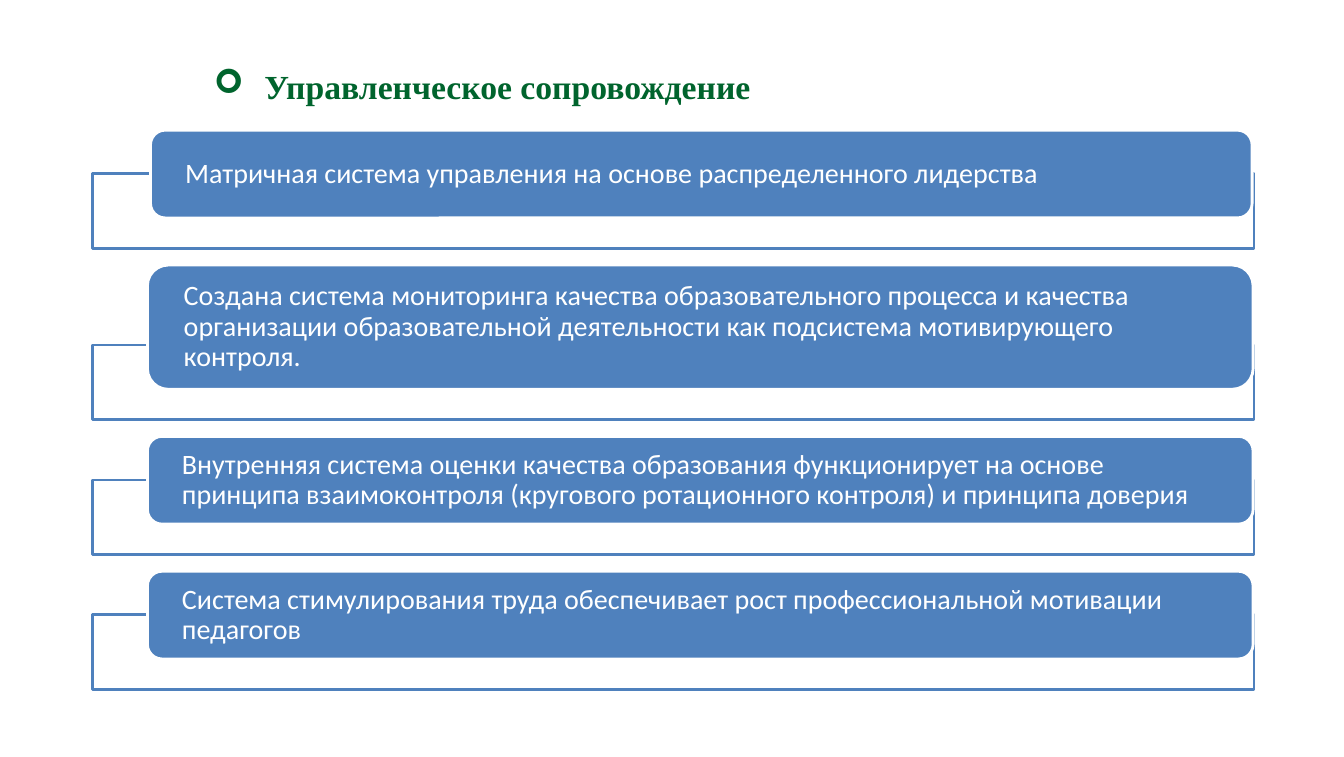
"""Build the slide on management support with four outlined statements."""
from dataclasses import dataclass

from lxml.etree import SubElement
from pptx import Presentation
from pptx.dml.color import RGBColor
from pptx.enum.shapes import MSO_SHAPE
from pptx.enum.text import MSO_ANCHOR, PP_ALIGN
from pptx.oxml.ns import qn
from pptx.shapes.autoshape import Shape
from pptx.slide import Slide
from pptx.text.text import TextFrame
from pptx.util import Pt

WHITE = RGBColor(0xFF, 0xFF, 0xFF)
BLUE = RGBColor(0x4F, 0x81, 0xBD)
GREEN = RGBColor(0x00, 0x64, 0x2D)

TITLE = "Управленческое сопровождение"
TITLE_FORMAT = {"name": "Times New Roman", "size": Pt(24), "bold": True}
STATEMENT_FORMAT = {"name": "Calibri", "size": Pt(20), "bold": False}
PANEL_FRAME_FORMAT = {
    "word_wrap": True,
    "vertical_anchor": MSO_ANCHOR.MIDDLE,
    "margin_left": Pt(21.6),
    "margin_right": Pt(21.6),
    "margin_top": Pt(0),
    "margin_bottom": Pt(0),
}

FIRST_TOP = 92.9
PANEL_GAP = 33.6
FRAME_LEFT, FRAME_WIDTH, FRAME_HEIGHT = 66.24, 828, 53.3
FRAME_OVERLAP = 31.5
TITLE_INDENT = 36


@dataclass
class Statement:
    """A rounded panel with its wording."""

    text: str
    left: float = 105.1
    width: float = 788.4
    height: float = 62.6


STATEMENTS = [
    Statement(
        "Матричная система управления на основе распределенного лидерства",
        left=107.3,
        width=785.5,
    ),
    Statement(
        "Создана система мониторинга качества образовательного процесса и качества "
        "организации образовательной деятельности как подсистема мотивирующего контроля.",
        height=88.6,
    ),
    Statement(
        "Внутренняя система оценки качества образования функционирует на основе "
        "принципа взаимоконтроля (кругового ротационного контроля) и принципа доверия"
    ),
    Statement(
        "Система стимулирования труда обеспечивает рост профессиональной мотивации педагогов"
    ),
]


def apply_format(target: object, values: dict) -> None:
    """Set every named attribute on the target."""
    for name, value in values.items():
        setattr(target, name, value)


def write_text(frame: TextFrame, text: str, values: dict, color: RGBColor) -> None:
    """Write one formatted line of text into the frame."""
    para = frame.paragraphs[0]
    para.alignment = PP_ALIGN.LEFT
    span = para.add_run()
    span.text = text
    apply_format(span.font, values)
    span.font.color.rgb = color


def add_block(page: Slide, kind: MSO_SHAPE, left: float, top: float, width: float,
              height: float, fill: RGBColor, line: RGBColor) -> Shape:
    """Add a filled and outlined shape without shadow."""
    block = page.shapes.add_shape(kind, Pt(left), Pt(top), Pt(width), Pt(height))
    block.shadow.inherit = False
    block.fill.solid()
    block.fill.fore_color.rgb = fill
    block.line.color.rgb = line
    block.line.width = Pt(2)
    return block


def add_title(page: Slide) -> None:
    """Add the bulleted heading."""
    box = page.shapes.add_textbox(Pt(145.4), Pt(43.2), Pt(748), Pt(36))
    box.text_frame.word_wrap = True
    properties = box.text_frame.paragraphs[0]._p.get_or_add_pPr()
    properties.set("marL", str(Pt(TITLE_INDENT)))
    properties.set("indent", str(-Pt(TITLE_INDENT)))
    SubElement(properties, qn("a:buFont"), typeface="Wingdings")
    SubElement(properties, qn("a:buChar"), char="➢")
    write_text(box.text_frame, TITLE, TITLE_FORMAT, GREEN)


def add_statement(page: Slide, statement: Statement, top: float) -> None:
    """Add an open frame with a statement panel over its upper edge."""
    frame_top = top + statement.height - FRAME_OVERLAP
    add_block(page, MSO_SHAPE.RECTANGLE, FRAME_LEFT, frame_top,
              FRAME_WIDTH, FRAME_HEIGHT, WHITE, BLUE)
    panel = add_block(page, MSO_SHAPE.ROUNDED_RECTANGLE, statement.left, top,
                      statement.width, statement.height, BLUE, WHITE)
    apply_format(panel.text_frame, PANEL_FRAME_FORMAT)
    panel.text_frame.paragraphs[0].line_spacing = 0.9
    write_text(panel.text_frame, statement.text, STATEMENT_FORMAT, WHITE)


def main() -> None:
    """Create the deck and save it."""
    deck = Presentation()
    deck.slide_width, deck.slide_height = Pt(958.32), Pt(540)
    page = deck.slides.add_slide(deck.slide_layouts[6])
    add_title(page)
    top = FIRST_TOP
    for statement in STATEMENTS:
        add_statement(page, statement, top)
        top += statement.height + PANEL_GAP
    deck.save("out.pptx")


if __name__ == "__main__":
    main()
